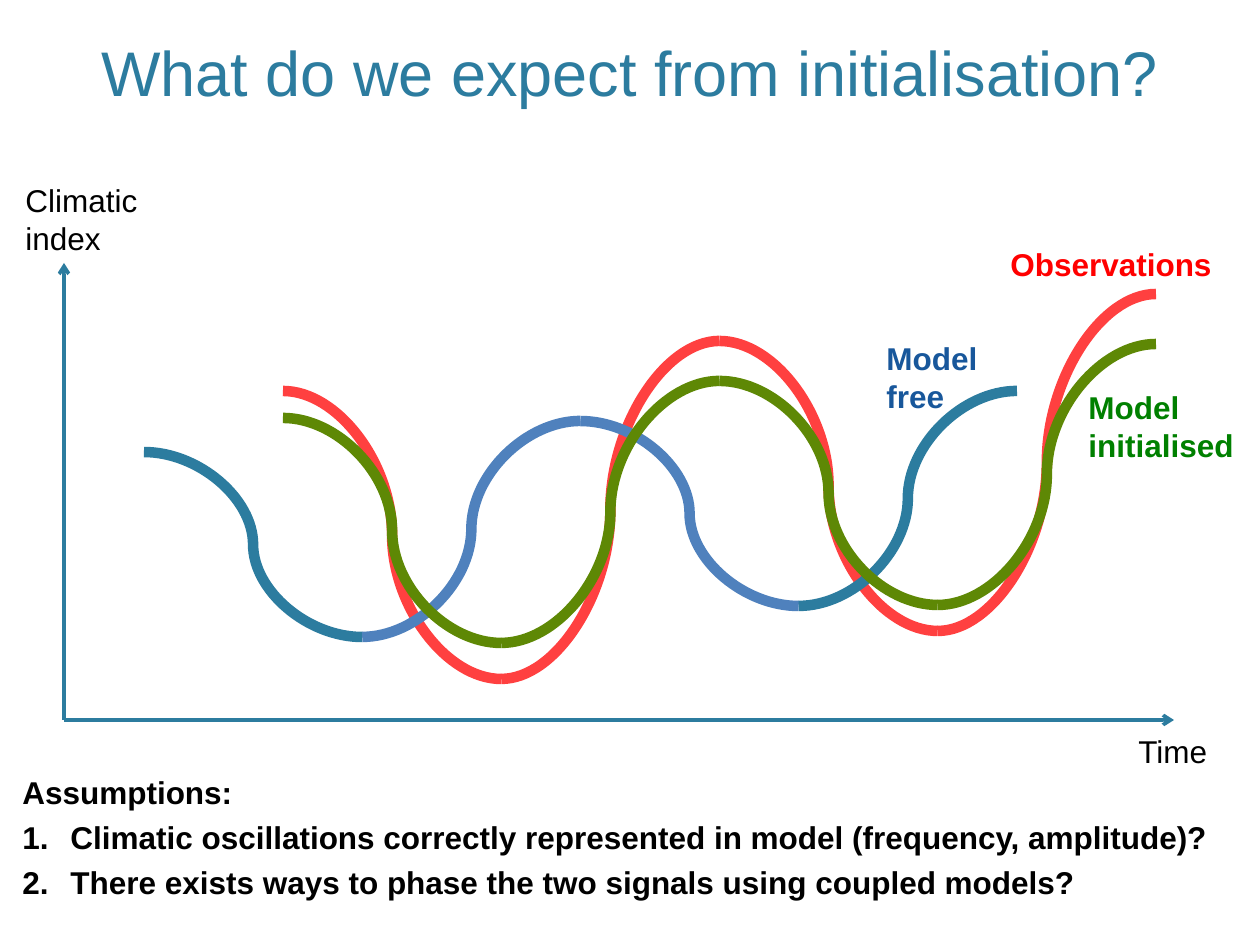
from dataclasses import dataclass

from lxml import etree
from pptx import Presentation
from pptx import util as u
from pptx.dml.color import RGBColor
from pptx.enum import shapes, text
from pptx.oxml.ns import qn

PX_PER_INCH = 126


@dataclass(frozen=True)
class Theme:
    font: str = "Arial"
    teal: str = "2C7C9F"
    blue: str = "4F81BD"
    red: str = "FF4040"
    green: str = "5E8805"
    ink: str = "000000"
    observed_label: str = "FF0000"
    free_label: str = "18579B"
    initialised_label: str = "008000"
    title_size: int = 36
    body_size: int = 18
    axis_width: int = 2
    curve_width: int = 6
    line_spacing: float = 25.6


THEME = Theme()
HALF_PERIOD = 218.25


def px(n):
    return u.Emu(round(n * u.Inches(1) / PX_PER_INCH))


def place(sp, left, top, width, height):
    sp.left, sp.top, sp.width, sp.height = map(px, (left, top, width, height))


def add_run(p, words, color, size=THEME.body_size, bold=False):
    r = p.add_run()
    r.text = words
    r.font.name = THEME.font
    r.font.size = u.Pt(size)
    r.font.bold = bold
    r.font.color.rgb = RGBColor.from_string(color)


def set_title(slide, words):
    sp = slide.shapes.title
    place(sp, 0, -14, 1260, 129)
    tf = sp.text_frame
    tf.auto_size = text.MSO_AUTO_SIZE.NONE
    tf.vertical_anchor = text.MSO_ANCHOR.BOTTOM
    p = tf.paragraphs[0]
    p.alignment = text.PP_ALIGN.CENTER
    add_run(p, words, THEME.teal, THEME.title_size)


def add_text_box(parent, box):
    tf = parent.add_textbox(*map(px, box)).text_frame
    tf.word_wrap = True
    tf.auto_size = text.MSO_AUTO_SIZE.SHAPE_TO_FIT_TEXT
    return tf


def add_label(parent, words, box, color=THEME.ink, bold=False):
    p = add_text_box(parent, box).paragraphs[0]
    add_run(p, words, color, bold=bold)


def add_line(parent, kind, start, end, color, width):
    line = parent.add_connector(kind, *map(px, (*start, *end)))
    line.line.color.rgb = RGBColor.from_string(color)
    line.line.width = u.Pt(width)
    etree.SubElement(line._element.spPr, qn("a:effectLst"))
    return line


def add_axis(parent, start, end):
    axis = add_line(parent, shapes.MSO_CONNECTOR.STRAIGHT, start, end,
                    THEME.teal, THEME.axis_width)
    etree.SubElement(axis.line._get_or_add_ln(), qn("a:tailEnd"), type="arrow")


def add_wave(slide, left, extremes, colors):
    """Group half-period curves that join successive peaks and troughs."""
    group = slide.shapes.add_group_shape()
    points = [(left + i * HALF_PERIOD, y) for i, y in enumerate(extremes)]
    for start, end, color in zip(points, points[1:], colors):
        add_line(group.shapes, shapes.MSO_CONNECTOR.CURVE, start, end,
                 color, THEME.curve_width)
    return group.shapes


def add_assumptions(slide, heading, items, box):
    tf = add_text_box(slide.shapes, box)
    for i, words in enumerate([heading, *items]):
        p = tf.add_paragraph() if i else tf.paragraphs[0]
        p.line_spacing = u.Pt(THEME.line_spacing)
        if i:
            pPr = p._p.get_or_add_pPr()
            pPr.set("marL", str(px(48)))
            pPr.set("indent", str(px(-48)))
            etree.SubElement(pPr, qn("a:buAutoNum"), type="arabicPeriod")
        add_run(p, words, THEME.ink, bold=True)


def main():
    prs = Presentation()
    prs.slide_width, prs.slide_height = px(1260), px(945)
    slide = prs.slides.add_slide(prs.slide_layouts[5])
    t = THEME

    set_title(slide, "What do we expect from initialisation?")
    add_wave(slide, 283, [391, 679, 341, 631, 294], [t.red] * 4)

    origin = (64, 720)
    add_axis(slide.shapes, origin, (64, 263))
    add_axis(slide.shapes, origin, (1174, 720))
    add_label(slide.shapes, "Climatic index", (13, 175, 198, 89))
    add_label(slide.shapes, "Time", (1126, 726, 198, 50))
    add_label(slide.shapes, "Observations", (998, 239, 247, 50),
              t.observed_label, bold=True)

    free = add_wave(slide, 144, [452, 637, 421, 606, 391],
                    [t.teal, t.blue, t.blue, t.teal])
    add_label(free, "Model free", (874, 333, 142, 89), t.free_label, bold=True)

    initialised = add_wave(slide, 283, [418, 643, 381, 605, 344], [t.green] * 4)
    add_label(initialised, "Model initialised", (1076, 382, 198, 89),
              t.initialised_label, bold=True)

    add_assumptions(slide, "Assumptions:", [
        "Climatic oscillations correctly represented in model (frequency, amplitude)?",
        "There exists ways to phase the two signals using coupled models?",
    ], (10, 760, 1245, 193))

    prs.save("out.pptx")


if __name__ == "__main__":
    main()
